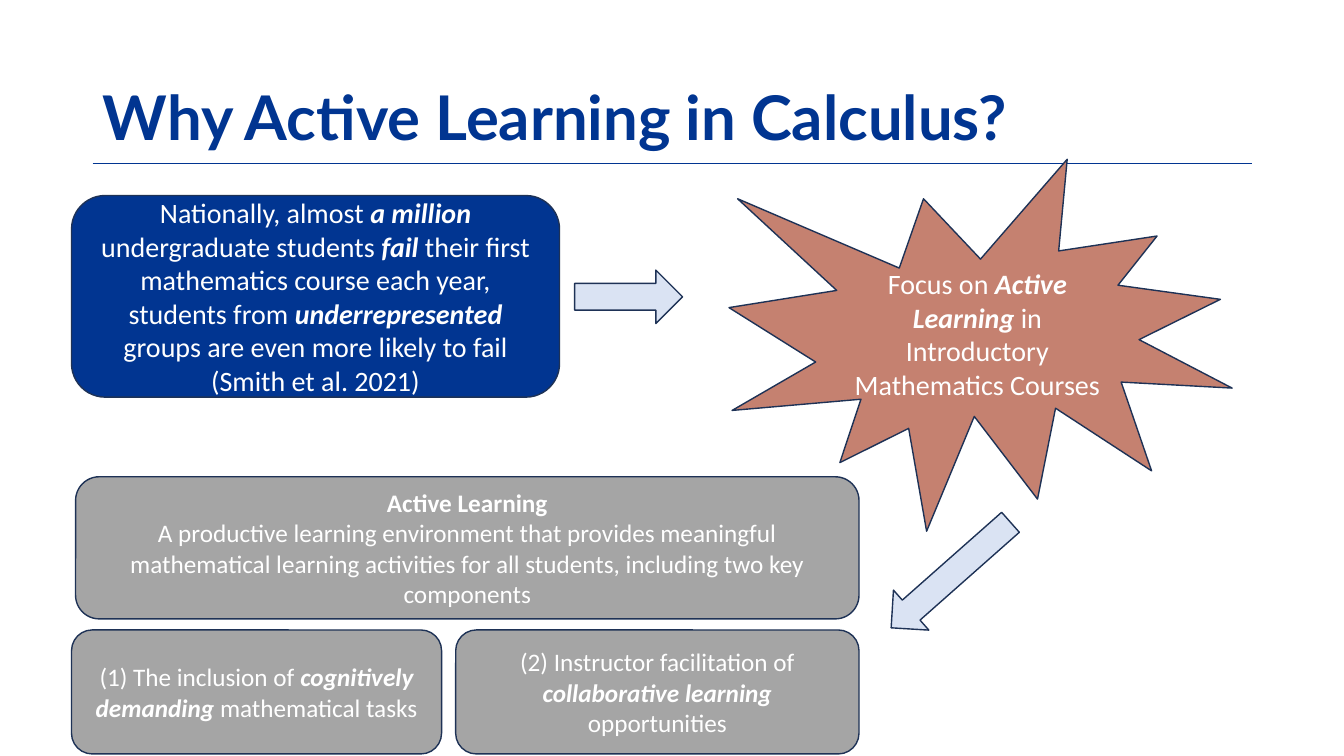
from dataclasses import dataclass
from typing import NamedTuple

from lxml import etree
from pptx import Presentation
from pptx.dml.color import RGBColor
from pptx.enum.shapes import MSO_CONNECTOR, MSO_SHAPE
from pptx.enum.text import MSO_ANCHOR, MSO_AUTO_SIZE, PP_ALIGN
from pptx.oxml.ns import qn
from pptx.util import Inches, Pt

ROUND = MSO_SHAPE.ROUNDED_RECTANGLE
BURST = MSO_SHAPE.EXPLOSION1
ARROW = MSO_SHAPE.RIGHT_ARROW
STRAIGHT = MSO_CONNECTOR.STRAIGHT
CENTER, LEFT = PP_ALIGN.CENTER, PP_ALIGN.LEFT
MIDDLE, BOTTOM = MSO_ANCHOR.MIDDLE, MSO_ANCHOR.BOTTOM
NO_FIT = MSO_AUTO_SIZE.NONE

BLUE, CLAY, GRAY, PALE = "013591", "C58170", "A5A5A5", "DAE3F3"
OUTLINE, WHITE = "1E3256", "FFFFFF"


class Run(NamedTuple):
    text: str
    bold: bool = False
    italic: bool = False


@dataclass
class Block:
    kind: int
    box: tuple[float, float, float, float]
    fill: str
    paragraphs: tuple[tuple[Run, ...], ...] = ()
    size: int = 18
    rotation: float = 0


def color(value: str) -> RGBColor:
    return RGBColor.from_string(value)


def strong(text: str) -> Run:
    return Run(text, bold=True, italic=True)


def add_text(p, text: str, *, size: int, font: str = "Calibri", fill: str = WHITE,
             bold: bool = False, italic: bool = False) -> None:
    r = p.add_run()
    r.text = text
    r.font.name = font
    r.font.size = Pt(size)
    r.font.bold = bold
    r.font.italic = italic
    r.font.color.rgb = color(fill)


def add_title(s, text: str) -> None:
    sp = s.shapes.title
    sp.left, sp.top, sp.width, sp.height = map(Inches, (0.92, 0.62, 11.5, 0.96))
    tf = sp.text_frame
    tf.word_wrap = True
    tf.auto_size = NO_FIT
    tf.vertical_anchor = BOTTOM
    p = tf.paragraphs[0]
    p.alignment = LEFT
    p.line_spacing = 0.9
    add_text(p, text, size=44, font="Lato", fill=BLUE, bold=True)


def add_rule(s, left: float, right: float, y: float) -> None:
    line = s.shapes.add_connector(STRAIGHT, Inches(left), Inches(y), Inches(right), Inches(y))
    line.line.color.rgb = color(BLUE)
    line.line.width = Pt(1)
    etree.SubElement(line._element.spPr, qn("a:effectLst"))


def add_block(s, block: Block) -> None:
    sp = s.shapes.add_shape(block.kind, *map(Inches, block.box))
    sp.shadow.inherit = False
    sp.rotation = block.rotation
    sp.fill.solid()
    sp.fill.fore_color.rgb = color(block.fill)
    sp.line.color.rgb = color(OUTLINE)
    sp.line.width = Pt(1)
    tf = sp.text_frame
    tf.word_wrap = True
    tf.vertical_anchor = MIDDLE
    for i, runs in enumerate(block.paragraphs):
        p = tf.add_paragraph() if i else tf.paragraphs[0]
        p.alignment = CENTER
        for run in runs:
            add_text(p, run.text, size=block.size, bold=run.bold, italic=run.italic)


BLOCKS = (
    Block(ROUND, (0.71, 1.94, 4.84, 2), BLUE, ((
        Run("Nationally, almost "), strong("a million "),
        Run("undergraduate students "), strong("fail"),
        Run(" their first mathematics course each year, students from "),
        strong("underrepresented"),
        Run(" groups are even more likely to fail (Smith et al. 2021)")),), size=20),
    Block(BURST, (7.23, 1.58, 4.99, 3.69), CLAY, ((
        Run("Focus on "), strong("Active Learning"),
        Run(" in Introductory Mathematics Courses")),), size=20),
    Block(ARROW, (5.7, 2.68, 1.07, 0.53), PALE),
    Block(ROUND, (0.75, 4.73, 7.77, 1.41), GRAY, (
        (Run("Active Learning", bold=True),),
        (Run("A productive learning environment that provides meaningful mathematical "
             "learning activities for all students, including two key components"),))),
    Block(ROUND, (0.71, 6.25, 3.67, 1.23), GRAY, ((
        Run("(1) The inclusion of "), strong("cognitively demanding "),
        Run("mathematical tasks")),)),
    Block(ROUND, (4.52, 6.25, 4, 1.23), GRAY, ((
        Run("(2) Instructor facilitation of "), strong("collaborative learning "),
        Run("opportunities")),)),
    Block(ARROW, (8.64, 5.44, 1.58, 0.53), PALE, rotation=138.5),
)


def main() -> None:
    prs = Presentation()
    prs.slide_width, prs.slide_height = Inches(13.33), Inches(7.5)
    s = prs.slides.add_slide(prs.slide_layouts[5])
    add_rule(s, 0.92, 12.42, 1.62)
    add_title(s, "Why Active Learning in Calculus?")
    for block in BLOCKS:
        add_block(s, block)
    prs.save("out.pptx")


if __name__ == "__main__":
    main()
